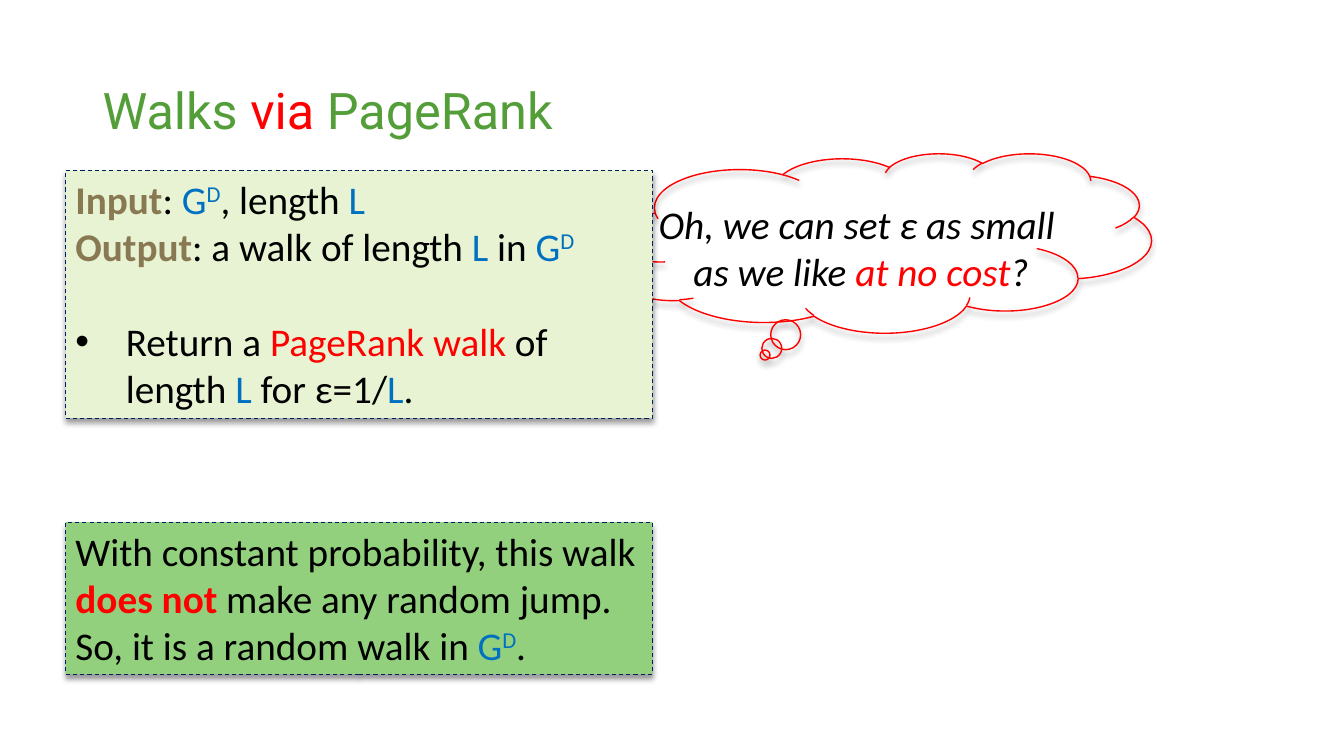
from dataclasses import dataclass

from lxml.etree import SubElement
from pptx import Presentation
from pptx.dml.color import RGBColor
from pptx.enum.dml import MSO_LINE
from pptx.enum.shapes import MSO_SHAPE
from pptx.enum.text import MSO_ANCHOR, MSO_AUTO_SIZE, PP_ALIGN
from pptx.oxml.ns import qn
from pptx.util import Inches, Pt


@dataclass(frozen=True)
class Theme:
    title_font: str = "Roboto"
    body_font: str = "Calibri"
    title_size: int = 36
    body_size: int = 28
    line_gap: int = 34
    green: str = "549E39"
    red: str = "FF0000"
    blue: str = "0070C0"
    brown: str = "887952"
    black: str = "000000"
    border: str = "002060"
    input_fill: str = "E8F3D4"
    result_fill: str = "93D07D"


THEME = Theme()
PLAIN = {"color": THEME.black}
RED = {"color": THEME.red}
GREEN = {"color": THEME.green}
SYMBOL = {"color": THEME.blue}
SUPERSCRIPT = {"color": THEME.blue, "raised": True}
LABEL = {"color": THEME.brown, "bold": True}
GRAPH = [("G", SYMBOL), ("D", SUPERSCRIPT)]
LENGTH = ("L", SYMBOL)


class SlideBuilder:
    """Draws styled elements on one slide."""

    def __init__(self, slide, theme):
        self.slide = slide
        self.theme = theme

    def add_runs(self, paragraph, runs, font_name, size, italic=False):
        for text, style in runs:
            run = paragraph.add_run()
            run.text = text
            run.font.name = font_name
            run.font.size = Pt(size)
            run.font.italic = italic
            run.font.bold = style.get("bold", False)
            run.font.color.rgb = RGBColor.from_string(style["color"])
            if style.get("raised"):
                run.font._element.set("baseline", "30000")

    def add_lines(self, frame, lines, alignment=PP_ALIGN.LEFT, italic=False):
        for index, runs in enumerate(lines):
            paragraph = frame.paragraphs[0] if index == 0 else frame.add_paragraph()
            paragraph.alignment = alignment
            self.add_runs(paragraph, runs, self.theme.body_font, self.theme.body_size, italic)

    def add_shadow(self, shape):
        shape.shadow.inherit = False
        effects = shape._element.spPr.find(qn("a:effectLst"))
        shadow = SubElement(effects, qn("a:outerShdw"), blurRad=str(Pt(4)),
                            dist=str(Pt(3)), dir="5400000", rotWithShape="0")
        color = SubElement(shadow, qn("a:srgbClr"), val=self.theme.black)
        SubElement(color, qn("a:alpha"), val="40000")

    def add_title(self, left, top, width, height, runs):
        frame = self.slide.shapes.add_textbox(
            Inches(left), Inches(top), Inches(width), Inches(height)).text_frame
        frame.word_wrap = True
        frame.vertical_anchor = MSO_ANCHOR.MIDDLE
        paragraph = frame.paragraphs[0]
        paragraph.line_spacing = 0.9
        self.add_runs(paragraph, runs, self.theme.title_font, self.theme.title_size)

    def add_panel(self, left, top, width, height, fill, lines):
        shape = self.slide.shapes.add_shape(
            MSO_SHAPE.RECTANGLE, Inches(left), Inches(top), Inches(width), Inches(height))
        shape.fill.solid()
        shape.fill.fore_color.rgb = RGBColor.from_string(fill)
        shape.line.color.rgb = RGBColor.from_string(self.theme.border)
        shape.line.width = Pt(0.75)
        shape.line.dash_style = MSO_LINE.DASH
        self.add_shadow(shape)
        frame = shape.text_frame
        frame.word_wrap = True
        frame.auto_size = MSO_AUTO_SIZE.SHAPE_TO_FIT_TEXT
        frame.vertical_anchor = MSO_ANCHOR.TOP
        self.add_lines(frame, lines)
        return frame

    def add_bullet(self, frame, runs):
        paragraph = frame.add_paragraph()
        paragraph.alignment = PP_ALIGN.LEFT
        paragraph.space_before = Pt(self.theme.line_gap)
        properties = paragraph._p.get_or_add_pPr()
        properties.set("marL", str(Inches(0.5)))
        properties.set("indent", str(Inches(-0.5)))
        SubElement(properties, qn("a:buFont"), typeface="Arial")
        SubElement(properties, qn("a:buChar"), char="•")
        self.add_runs(paragraph, runs, self.theme.body_font, self.theme.body_size)

    def add_thought_cloud(self, left, top, width, height):
        shape = self.slide.shapes.add_shape(
            MSO_SHAPE.CLOUD_CALLOUT, Inches(left), Inches(top), Inches(width), Inches(height))
        shape.fill.background()
        shape.line.color.rgb = RGBColor.from_string(self.theme.red)
        shape.line.width = Pt(1)
        self.add_shadow(shape)

    def add_thought(self, left, top, width, height, lines):
        frame = self.slide.shapes.add_textbox(
            Inches(left), Inches(top), Inches(width), Inches(height)).text_frame
        frame.word_wrap = False
        frame.auto_size = MSO_AUTO_SIZE.SHAPE_TO_FIT_TEXT
        self.add_lines(frame, lines, PP_ALIGN.CENTER, italic=True)


def main():
    presentation = Presentation()
    presentation.slide_width = Inches(13.33)
    presentation.slide_height = Inches(7.5)
    slide = presentation.slides.add_slide(presentation.slide_layouts[6])
    builder = SlideBuilder(slide, THEME)

    builder.add_title(0.92, 0.4, 11.5, 1.45,
                      [("Walks ", GREEN), ("via ", RED), ("PageRank", GREEN)])
    builder.add_panel(0.65, 5.18, 5.82, 1.51, THEME.result_fill, [
        [("With constant probability, this walk", PLAIN)],
        [("does not", {**RED, "bold": True}), (" make any random jump.", PLAIN)],
        [("So, it is a random walk in ", PLAIN), *GRAPH, (".", PLAIN)],
    ])
    builder.add_thought_cloud(6.01, 1.52, 5.41, 1.78)
    builder.add_thought(6.41, 1.94, 4.26, 1.04, [
        [("Oh, we can set ε as small ", PLAIN)],
        [("as we like ", PLAIN), ("at no cost", RED), ("?", PLAIN)],
    ])
    algorithm = builder.add_panel(0.65, 1.69, 5.82, 2.46, THEME.input_fill, [
        [("Input", LABEL), (": ", PLAIN), *GRAPH, (", length ", PLAIN), LENGTH],
        [("Output", LABEL), (": a walk of length ", PLAIN), LENGTH, (" in ", PLAIN), *GRAPH],
    ])
    builder.add_bullet(algorithm, [
        ("Return a ", PLAIN), ("PageRank walk", RED), (" of length ", PLAIN), LENGTH,
        (" for ε=1/", PLAIN), LENGTH, (".", PLAIN),
    ])
    presentation.save("out.pptx")


if __name__ == "__main__":
    main()
